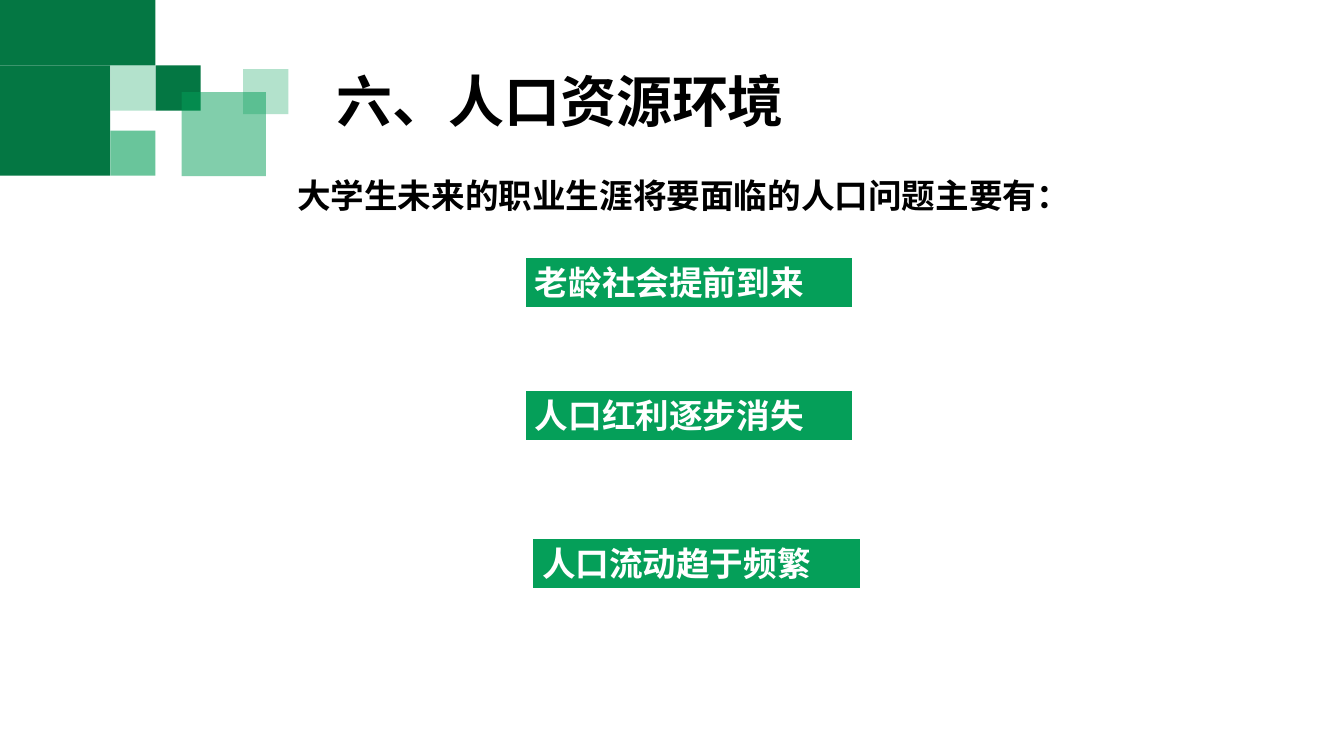
from lxml.etree import SubElement
from pptx import Presentation
from pptx.dml.color import RGBColor
from pptx.enum.shapes import MSO_SHAPE as SHAPE
from pptx.enum.text import MSO_ANCHOR as ANCHOR, MSO_AUTO_SIZE as AUTO, PP_ALIGN as ALIGN
from pptx.oxml.ns import qn
from pptx.util import Cm, Pt

DARK, GREEN, WHITE, BLACK = "047743", "059F59", "FFFFFF", "000000"
SMALL = 1.14  # side of a small decorative square, in cm

# left, top, width, height in cm, colour, opacity in percent
CORNER_BLOCKS = [
    (0, 1.65, 2.78, 2.78, DARK, 100),
    (0, 0, 3.92, 1.65, DARK, 100),
    (2.78, 1.65, SMALL, SMALL, GREEN, 30),
    (3.92, 1.65, SMALL, SMALL, DARK, 100),
    (2.78, 3.29, SMALL, SMALL, GREEN, 60),
    (4.58, 2.32, 2.12, 2.12, GREEN, 50),
    (6.13, 1.74, SMALL, SMALL, GREEN, 30),
]

# left and top in cm
POPULATION_ISSUES = [
    ("老龄社会提前到来", 13.23, 6.48),
    ("人口红利逐步消失", 13.23, 9.83),
    ("人口流动趋于频繁", 13.41, 13.56),
]


def rgb(colour):
    return RGBColor.from_string(colour)


def add_block(slide, left, top, width, height, colour, opacity=100):
    sp = slide.shapes.add_shape(SHAPE.RECTANGLE, Cm(left), Cm(top), Cm(width), Cm(height))
    sp.shadow.inherit = False
    sp.fill.solid()
    sp.fill.fore_color.rgb = rgb(colour)
    sp.line.fill.background()
    if opacity < 100:
        clr = sp.fill._xPr.find(qn("a:solidFill"))[0]
        SubElement(clr, qn("a:alpha"), val=str(opacity * 1000))
    return sp


def write(sp, text, size, colour, font="Calibri", wrap=True):
    """Fill a shape with one bold, left-aligned paragraph and return it."""
    tf = sp.text_frame
    tf.text = text
    tf.word_wrap = wrap
    tf.auto_size = AUTO.SHAPE_TO_FIT_TEXT
    tf.vertical_anchor = ANCHOR.TOP
    p = tf.paragraphs[0]
    p.alignment = ALIGN.LEFT
    r = p.runs[0]
    r.font.size = Pt(size)
    r.font.bold = True
    r.font.name = font
    r.font.color.rgb = rgb(colour)
    SubElement(r.font._element, qn("a:ea"), typeface="Calibri")
    return p


def add_title(slide, text):
    sp = slide.shapes.add_textbox(Cm(8.23), Cm(1.75), Cm(15.19), Cm(1.8))
    p = write(sp, text, 40, BLACK)
    p.line_spacing = 0.9
    p.space_before = Pt(10)


def add_lead(slide, text):
    sp = slide.shapes.add_textbox(Cm(6.5), Cm(3.78), Cm(20.93), Cm(1.68))
    p = write(sp, text, 24, BLACK, "Noto Sans CJK SC", wrap=False)
    p.line_spacing = 1.5
    p._p.get_or_add_pPr().set("indent", str(Cm(0.74)))


def add_issue(slide, text, left, top):
    sp = add_block(slide, left, top, 8.28, 1.28, GREEN)
    sp.line.color.rgb = rgb(WHITE)
    sp.line.width = Pt(1.5)
    write(sp, text, 24, WHITE)


def main():
    prs = Presentation()
    prs.slide_width, prs.slide_height = Cm(33.87), Cm(19.05)
    slide = prs.slides.add_slide(prs.slide_layouts[6])
    for block in CORNER_BLOCKS:
        add_block(slide, *block)
    add_title(slide, "六、人口资源环境")
    add_lead(slide, "大学生未来的职业生涯将要面临的人口问题主要有：")
    for issue in POPULATION_ISSUES:
        add_issue(slide, *issue)
    prs.save("out.pptx")


if __name__ == "__main__":
    main()
